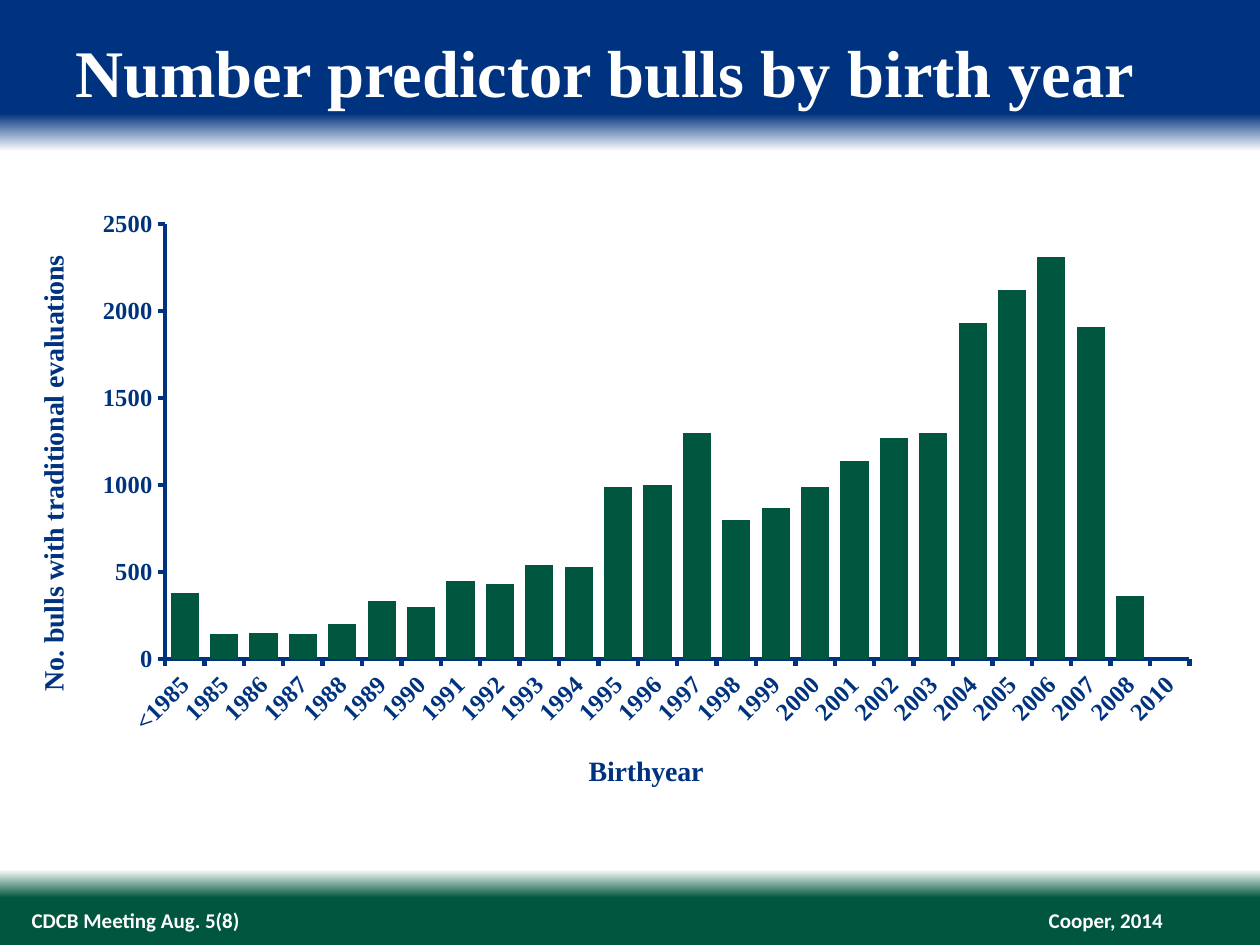
from dataclasses import dataclass

from lxml import etree
from pptx import Presentation
from pptx.chart.data import CategoryChartData
from pptx.dml.color import RGBColor
from pptx.enum.chart import XL_CHART_TYPE, XL_TICK_MARK
from pptx.enum.text import MSO_ANCHOR, PP_ALIGN
from pptx.oxml import parse_xml
from pptx.oxml.ns import nsdecls, qn
from pptx.util import Inches, Pt


@dataclass(frozen=True)
class Theme:
    blue: str = "00337F"
    green: str = "00563F"
    white: str = "FFFFFF"
    serif: str = "Times New Roman"
    sans: str = "Calibri"
    title: int = 38
    axis_title: int = 16
    tick: int = 14
    footer: int = 12
    chart: int = 10


def style_font(font, size, name, color, bold=True):
    font.size, font.name, font.bold = Pt(size), name, bold
    font.color.rgb = RGBColor.from_string(color)


class SlideBuilder:
    def __init__(self, s, theme):
        self.s, self.theme = s, theme

    def background(self, stops):
        fill = self.s.background.fill
        fill.gradient()
        fill.gradient_angle = 270  # counter-clockwise: runs top to bottom
        gs_list = next(self.s.background._cSld.iter(qn("a:gsLst")))
        for gs in list(gs_list):
            gs_list.remove(gs)
        for percent, color in stops:
            gs = etree.SubElement(gs_list, qn("a:gs"), pos=str(percent * 1000))
            etree.SubElement(gs, qn("a:srgbClr"), val=color)

    def text(self, text, box, size, name, insets=(0, 0, 0, 0),
             anchor=MSO_ANCHOR.MIDDLE, align=PP_ALIGN.LEFT, wrap=True):
        tf = self.s.shapes.add_textbox(*map(Inches, box)).text_frame
        tf.word_wrap, tf.vertical_anchor = wrap, anchor
        (tf.margin_left, tf.margin_top,
         tf.margin_right, tf.margin_bottom) = map(Inches, insets)
        p = tf.paragraphs[0]
        p.alignment = align
        r = p.add_run()
        r.text = text
        style_font(r.font, size, name, self.theme.white)

    def axis(self, axis, title):
        t = self.theme
        axis.has_major_gridlines = False
        axis.major_tick_mark = XL_TICK_MARK.OUTSIDE
        axis.minor_tick_mark = XL_TICK_MARK.NONE
        axis.format.line.color.rgb = RGBColor.from_string(t.blue)
        axis.format.line.width = Pt(2.5)
        style_font(axis.tick_labels.font, t.tick, t.serif, t.blue)
        r = axis.axis_title.text_frame.paragraphs[0].add_run()
        r.text = title
        style_font(r.font, t.axis_title, t.serif, t.blue)

    def column_chart(self, box, cats, vals, cat_title, val_title, plot_box):
        t = self.theme
        data = CategoryChartData()
        data.categories = cats
        data.add_series("Series 1", vals)
        chart = self.s.shapes.add_chart(
            XL_CHART_TYPE.COLUMN_CLUSTERED, *map(Inches, box), data).chart
        chart.has_legend = chart.has_title = False
        style_font(chart.font, t.chart, t.sans, t.blue, False)

        # Columns
        plot = chart.plots[0]
        plot.gap_width, plot.vary_by_categories = 40, False
        fill = plot.series[0].format.fill
        fill.solid()
        fill.fore_color.rgb = RGBColor.from_string(t.green)

        # Axes
        self.axis(chart.category_axis, cat_title)
        self.axis(chart.value_axis, val_title)
        chart.value_axis.minimum_scale = 0
        chart.value_axis.maximum_scale = 2500
        chart.value_axis.major_unit = 500
        labels = chart.category_axis._element.find(qn("c:txPr"))
        labels.find(qn("a:bodyPr")).set("rot", "-2700000")

        # Inner plot area: slide inches turned into fractions of the chart
        left, top, width, height = box
        x, y, w, h = plot_box
        fractions = {"x": (x - left) / width, "y": (y - top) / height,
                     "w": w / width, "h": h / height}
        area = chart._chartSpace.chart.plotArea
        for old in area.findall(qn("c:layout")):
            area.remove(old)
        parts = "".join(f'<c:{k} val="{v}"/>' for k, v in fractions.items())
        area.insert(0, parse_xml(
            f'<c:layout {nsdecls("c")}><c:manualLayout>'
            '<c:layoutTarget val="inner"/><c:xMode val="edge"/>'
            f'<c:yMode val="edge"/>{parts}</c:manualLayout></c:layout>'))


def main():
    prs = Presentation()
    prs.slide_width, prs.slide_height = Inches(10), Inches(7.5)
    t = Theme()
    slide = SlideBuilder(prs.slides.add_slide(prs.slide_layouts[6]), t)

    # Blue header and green footer bands
    slide.background([(0, t.blue), (12, t.blue), (16, t.white),
                      (92, t.white), (95, t.green), (100, t.green)])

    # Footer
    slide.text("Cooper, 2014", (8.3, 7.2, 0.93, 0.2), t.footer, t.sans,
               align=PP_ALIGN.RIGHT, wrap=False)
    slide.text("CDCB Meeting Aug. 5(8)", (0.25, 7.2, 5.22, 0.2),
               t.footer, t.sans)

    # Title
    slide.text("Number predictor bulls by birth year", (0.5, 0.2, 9, 0.64),
               t.title, t.serif, (0.1, 0.05, 0.1, 0.05), MSO_ANCHOR.TOP)

    # Bulls per birth year
    years = ["<1985", *map(str, range(1985, 2009)), "2010"]
    bulls = [380, 140, 150, 140, 200, 330, 300, 450, 430, 540, 530, 990, 1000,
             1300, 800, 870, 990, 1140, 1270, 1300, 1930, 2120, 2310, 1910,
             360, 0]
    slide.column_chart((0.06, 1.57, 9.57, 4.93), years, bulls, "Birthyear",
                       "No. bulls with traditional evaluations",
                       (1.31, 1.78, 8.13, 3.45))

    prs.save("out.pptx")


if __name__ == "__main__":
    main()
